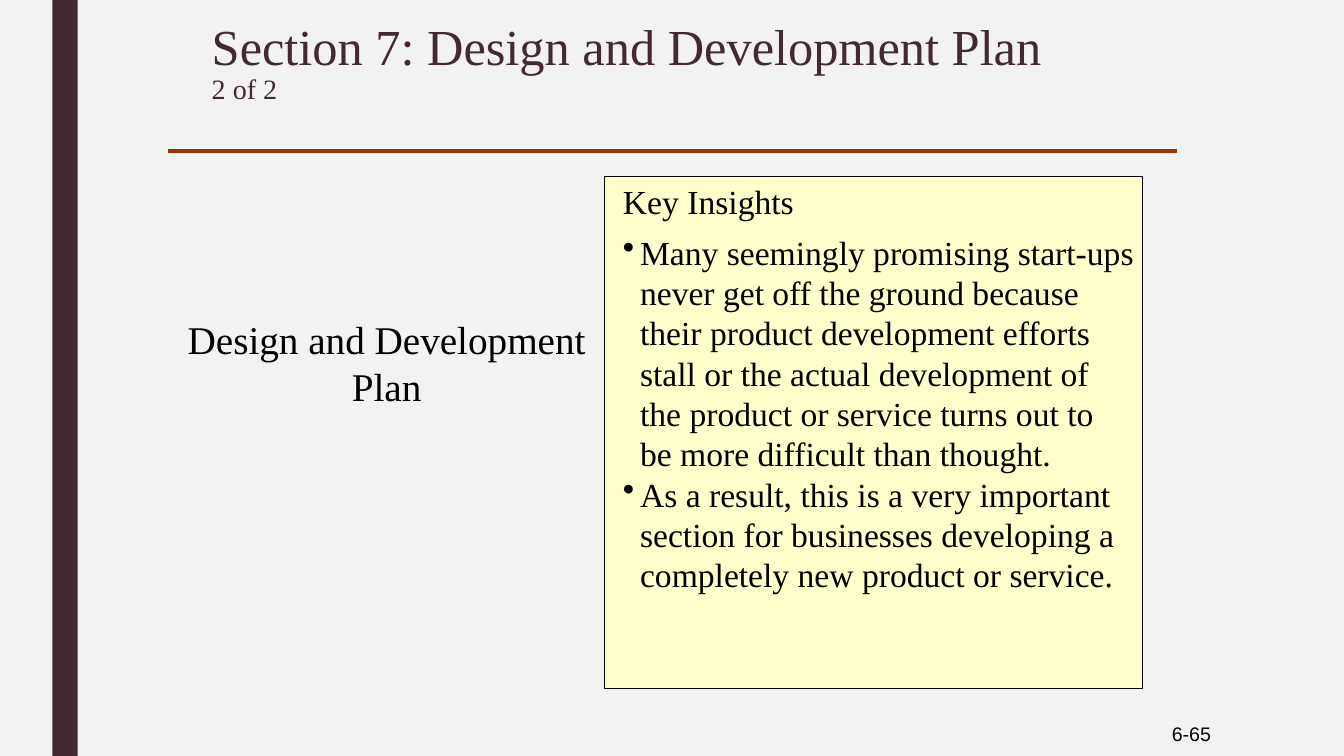
from lxml import etree
from pptx import Presentation
from pptx.dml.color import RGBColor
from pptx.enum.shapes import MSO_CONNECTOR, MSO_SHAPE
from pptx.enum.text import MSO_ANCHOR, MSO_AUTO_SIZE, PP_ALIGN
from pptx.oxml.ns import qn
from pptx.util import Emu, Pt

PX = 9144
TITLE_ONLY = 5
LEFT, CENTER, RIGHT = PP_ALIGN.LEFT, PP_ALIGN.CENTER, PP_ALIGN.RIGHT
TOP, MIDDLE = MSO_ANCHOR.TOP, MSO_ANCHOR.MIDDLE
NO_AUTOFIT = MSO_AUTO_SIZE.NONE
RECTANGLE, STRAIGHT = MSO_SHAPE.RECTANGLE, MSO_CONNECTOR.STRAIGHT

SERIF, SANS = "Times New Roman", "Arial"
PAPER, PLUM, RUST, CREAM, BLACK = "F2F2F0", "432A30", "993300", "FFFFCC", "000000"
HANGING = 17

INSIGHTS = [
    "Many seemingly promising start-ups\vnever get off the ground because\v"
    "their product development efforts\vstall or the actual development of\v"
    "the product or service turns out to\vbe more difficult than thought.",
    "As a result, this is a very important\vsection for businesses developing a\v"
    "completely new product or service.",
]


def px(*lengths):
    """Turn whole pixels into EMU lengths."""
    return [Emu(length * PX) for length in lengths]


def color(value):
    """Turn a hex string into a colour."""
    return RGBColor.from_string(value)


def style(font, size, name=SERIF, ink=BLACK):
    """Set the size, typeface and colour of a font."""
    font.size, font.name = Pt(size), name
    font.color.rgb = color(ink)


def add_panel(page, place, fill, outline=None):
    """Add a filled rectangle with an optional thin outline."""
    panel = page.shapes.add_shape(RECTANGLE, *px(*place))
    panel.shadow.inherit = False
    panel.fill.solid()
    panel.fill.fore_color.rgb = color(fill)
    if outline:
        panel.line.color.rgb = color(outline)
        panel.line.width = Pt(0.75)
    else:
        panel.line.fill.background()


def add_rule(page, ends, ink, width):
    """Add a straight line without a shadow."""
    rule = page.shapes.add_connector(STRAIGHT, *px(*ends))
    rule.line.color.rgb = color(ink)
    rule.line.width = Pt(width)
    etree.SubElement(rule._element.spPr, qn("a:effectLst"))


def add_bullet(para):
    """Give a paragraph a round bullet and a hanging indent."""
    properties = para._p.get_or_add_pPr()
    properties.set("marL", str(HANGING * PX))
    properties.set("indent", str(-HANGING * PX))
    bullet = etree.Element(qn("a:buChar"), char="•")
    properties.insert(0, bullet)


def add_text(page, place, lines, size, name=SERIF, align=LEFT, anchor=TOP, bulleted=False):
    """Add a wrapped text box with one paragraph for each line."""
    frame = page.shapes.add_textbox(*px(*place)).text_frame
    frame.word_wrap = True
    frame.vertical_anchor = anchor
    for index, line in enumerate(lines):
        para = frame.add_paragraph() if index else frame.paragraphs[0]
        para.text = line
        para.alignment = align
        style(para.font, size, name)
        if bulleted:
            add_bullet(para)


def set_title(page, place, heading, counter):
    """Place the title with a small counter on its second line."""
    title = page.shapes.title
    title.left, title.top, title.width, title.height = px(*place)
    frame = title.text_frame
    frame.auto_size = NO_AUTOFIT
    frame.vertical_anchor = TOP
    para = frame.paragraphs[0]
    para.alignment = LEFT
    para.line_spacing = 0.89
    for index, (text, size) in enumerate([(heading, 36), (counter, 20)]):
        if index:
            para.add_line_break()
        span = para.add_run()
        span.text = text
        style(span.font, size, ink=PLUM)


def main():
    """Build the slide and save the deck."""
    deck = Presentation()
    deck.slide_width, deck.slide_height = px(1333, 750)
    page = deck.slides.add_slide(deck.slide_layouts[TITLE_ONLY])
    page.background.fill.solid()
    page.background.fill.fore_color.rgb = color(PAPER)

    add_panel(page, (52, 0, 25, 750), PLUM)
    add_rule(page, (167, 150, 1167, 150), RUST, 3)
    add_text(page, (167, 308, 433, 104), ["Design and Development Plan"], 28, align=CENTER)
    add_panel(page, (600, 175, 533, 508), CREAM, BLACK)
    add_text(page, (608, 175, 508, 51), ["Key Insights"], 24)
    add_text(page, (608, 225, 558, 374), INSIGHTS, 24, bulleted=True)
    set_title(page, (200, 17, 942, 125), "Section 7: Design and Development Plan", "2 of 2")
    add_text(page, (1036, 706, 175, 44), ["6-65"], 14, SANS, RIGHT, MIDDLE)
    deck.save("out.pptx")


if __name__ == "__main__":
    main()
